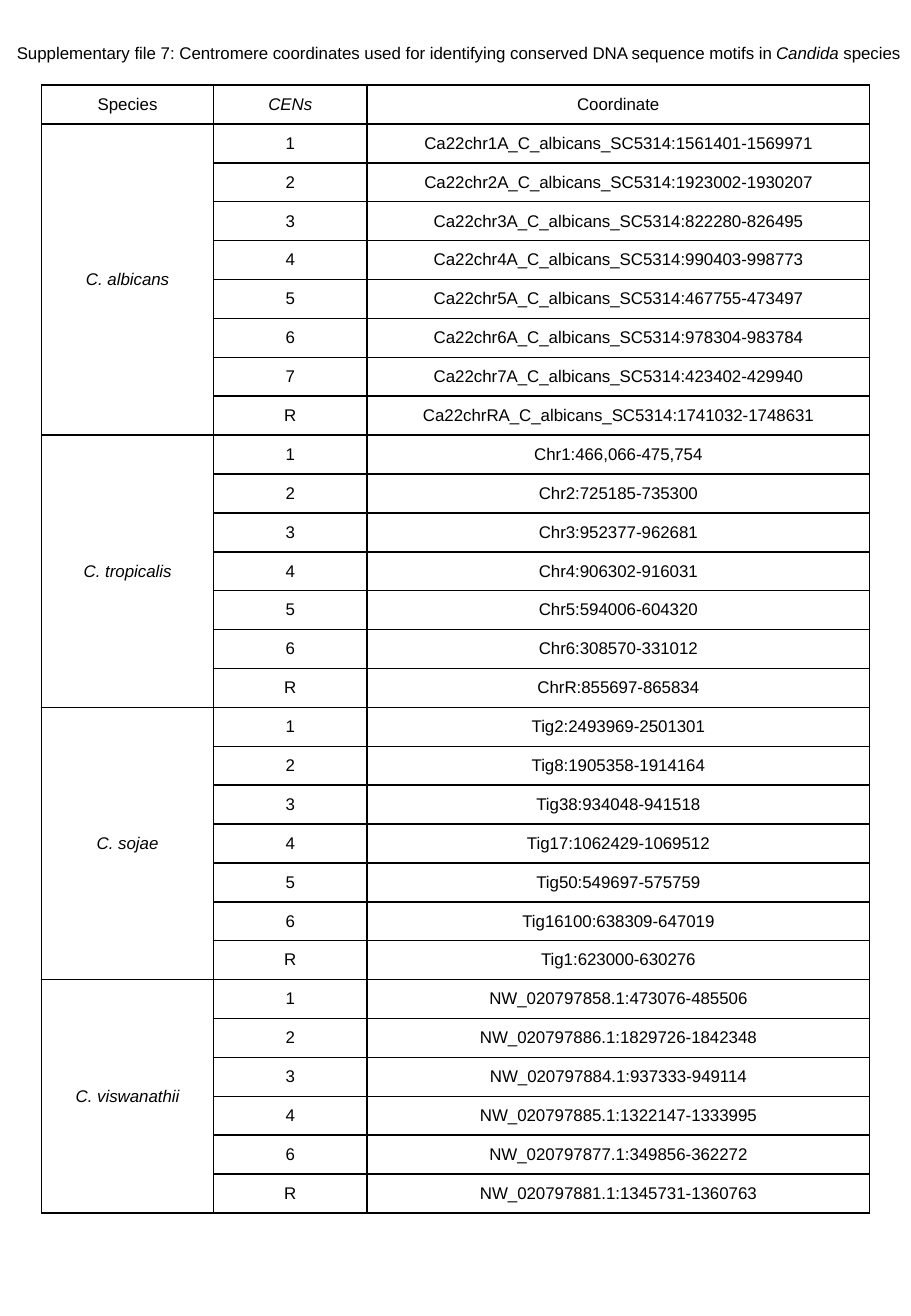
from lxml import etree
from pptx import Presentation
from pptx.dml.color import RGBColor
from pptx.enum import text
from pptx.oxml import ns
from pptx.util import Inches, Pt

TITLE = [
    ("Supplementary file 7: Centromere coordinates used for identifying "
     "conserved DNA sequence motifs in ", False),
    ("Candida", True),
    (" species", False),
]
HEADS = [("Species", False), ("CENs", True), ("Coordinate", False)]
SPECIES = {
    "C. albicans": [
        ("1", "Ca22chr1A_C_albicans_SC5314:1561401-1569971"),
        ("2", "Ca22chr2A_C_albicans_SC5314:1923002-1930207"),
        ("3", "Ca22chr3A_C_albicans_SC5314:822280-826495"),
        ("4", "Ca22chr4A_C_albicans_SC5314:990403-998773"),
        ("5", "Ca22chr5A_C_albicans_SC5314:467755-473497"),
        ("6", "Ca22chr6A_C_albicans_SC5314:978304-983784"),
        ("7", "Ca22chr7A_C_albicans_SC5314:423402-429940"),
        ("R", "Ca22chrRA_C_albicans_SC5314:1741032-1748631"),
    ],
    "C. tropicalis": [
        ("1", "Chr1:466,066-475,754"),
        ("2", "Chr2:725185-735300"),
        ("3", "Chr3:952377-962681"),
        ("4", "Chr4:906302-916031"),
        ("5", "Chr5:594006-604320"),
        ("6", "Chr6:308570-331012"),
        ("R", "ChrR:855697-865834"),
    ],
    "C. sojae": [
        ("1", "Tig2:2493969-2501301"),
        ("2", "Tig8:1905358-1914164"),
        ("3", "Tig38:934048-941518"),
        ("4", "Tig17:1062429-1069512"),
        ("5", "Tig50:549697-575759"),
        ("6", "Tig16100:638309-647019"),
        ("R", "Tig1:623000-630276"),
    ],
    "C. viswanathii": [
        ("1", "NW_020797858.1:473076-485506"),
        ("2", "NW_020797886.1:1829726-1842348"),
        ("3", "NW_020797884.1:937333-949114"),
        ("4", "NW_020797885.1:1322147-1333995"),
        ("6", "NW_020797877.1:349856-362272"),
        ("R", "NW_020797881.1:1345731-1360763"),
    ],
}
BLACK = "000000"
WIDTHS = [1.42, 1.26, 4.14]
HEIGHT = 9.29
FONT = {"name": "Arial", "size": Pt(10)}
CELL = {
    "vertical_anchor": text.MSO_ANCHOR.MIDDLE,
    "margin_left": Inches(0.13), "margin_right": Inches(0.13),
    "margin_top": Inches(0.05), "margin_bottom": Inches(0.05),
}


def apply(item, values):
    for name, value in values.items():
        setattr(item, name, value)


def paint(color, code):
    color.rgb = RGBColor.from_string(code)


def write(para, words, italic):
    run = para.add_run()
    run.text = words
    apply(run.font, {**FONT, "italic": italic})
    paint(run.font.color, BLACK)


def frame(cell):
    """Draw a thin line on all four sides of a cell and clear its fill."""
    props = cell._tc.get_or_add_tcPr()
    for side in ("lnL", "lnR", "lnT", "lnB"):
        line = etree.SubElement(props, ns.qn("a:" + side), w=str(Pt(1)))
        fill = etree.SubElement(line, ns.qn("a:solidFill"))
        etree.SubElement(fill, ns.qn("a:srgbClr"), val=BLACK)
    cell.fill.background()


def fill_in(cell, words, italic=False):
    apply(cell, CELL)
    para = cell.text_frame.paragraphs[0]
    para.alignment = text.PP_ALIGN.CENTER
    write(para, words, italic)


def add_title(slide):
    box = slide.shapes.add_textbox(
        Inches(0.04), Inches(0.3), Inches(7.97), Inches(0.27))
    apply(box.text_frame, {
        "word_wrap": True,
        "vertical_anchor": text.MSO_ANCHOR.MIDDLE,
        "auto_size": text.MSO_AUTO_SIZE.SHAPE_TO_FIT_TEXT,
    })
    for words, italic in TITLE:
        write(box.text_frame.paragraphs[0], words, italic)


def add_grid(slide):
    count = 1 + sum(len(rows) for rows in SPECIES.values())
    grid = slide.shapes.add_table(
        count, len(WIDTHS), Inches(0.34), Inches(0.7),
        Inches(sum(WIDTHS)), Inches(HEIGHT)).table
    apply(grid, {"first_row": False, "horz_banding": False})
    for col, width in zip(grid.columns, WIDTHS):
        col.width = Inches(width)
    for row in grid.rows:
        row.height = Inches(HEIGHT / count)
    for cell in grid.iter_cells():
        frame(cell)

    for col, (words, italic) in enumerate(HEADS):
        fill_in(grid.cell(0, col), words, italic)
    top = 1
    for name, rows in SPECIES.items():
        first = grid.cell(top, 0)
        first.merge(grid.cell(top + len(rows) - 1, 0))
        fill_in(first, name, True)
        for row, pair in enumerate(rows, top):
            for col, words in enumerate(pair, 1):
                fill_in(grid.cell(row, col), words)
        top += len(rows)


def main():
    deck = Presentation()
    apply(deck, {"slide_width": Inches(7.5), "slide_height": Inches(10.83)})
    slide = deck.slides.add_slide(deck.slide_layouts[6])
    add_grid(slide)
    add_title(slide)
    deck.save("out.pptx")


if __name__ == "__main__":
    main()
